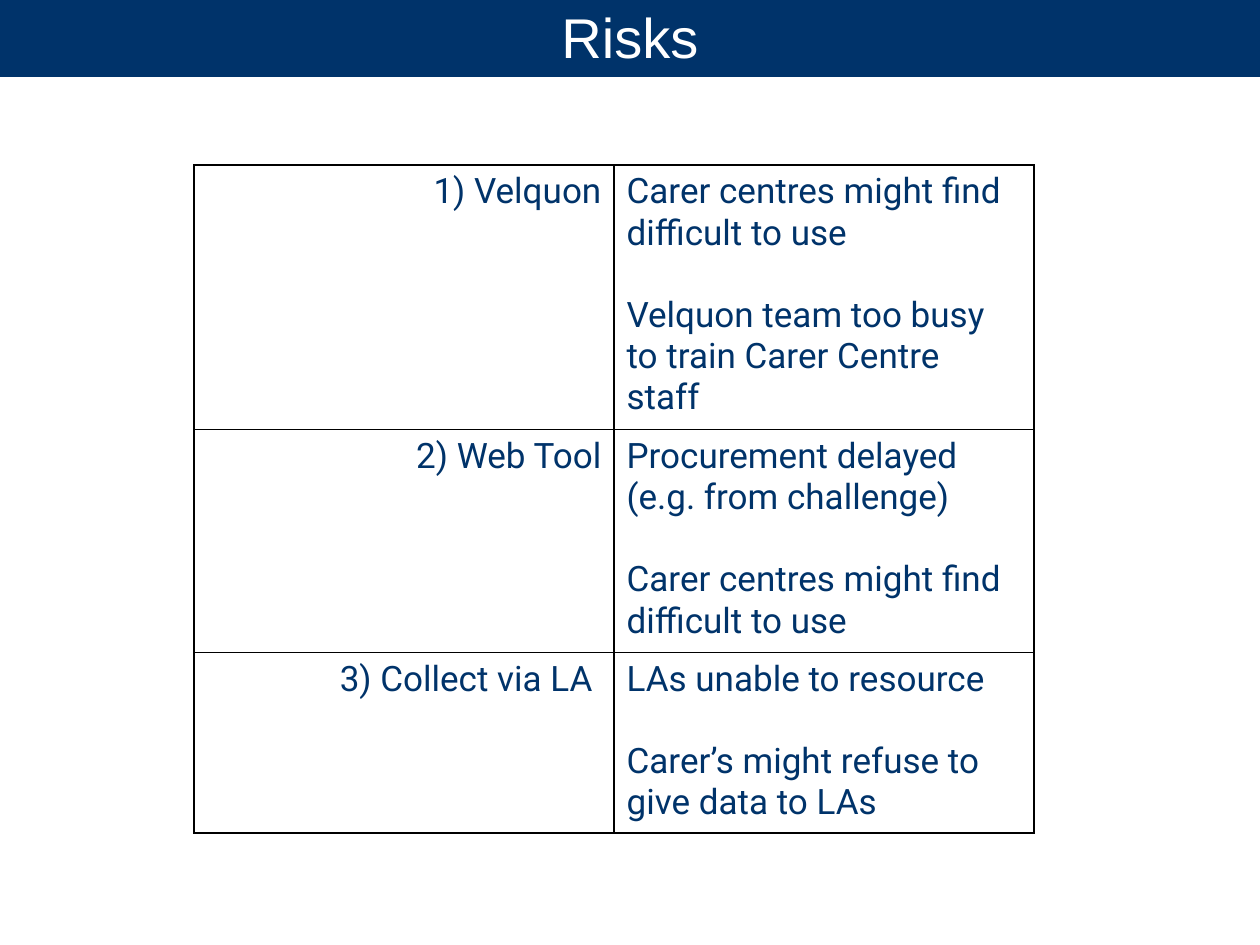
from lxml.etree import fromstring
from pptx import Presentation
from pptx.dml.color import RGBColor
from pptx.enum.text import MSO_ANCHOR, MSO_AUTO_SIZE, PP_ALIGN
from pptx.oxml.ns import nsdecls
from pptx.util import Inches, Pt

COLORS = {"navy": "00336A", "white": "FFFFFF", "border": "000000"}
RISKS = [
    ("1) Velquon", ["Carer centres might find difficult to use",
                    "Velquon team too busy to train Carer Centre staff"]),
    ("2) Web Tool", ["Procurement delayed (e.g. from challenge)",
                     "Carer centres might find difficult to use"]),
    ("3) Collect via LA ", ["LAs unable to resource",
                            "Carer’s might refuse to give data to LAs"]),
]
ROW_HEIGHTS = [2.1, 1.77, 1.43]


def format_paragraph(p, font, size, color, align):
    p.alignment = align
    for r in p.runs:
        r.font.name = font
        r.font.size = Pt(size)
        r.font.color.rgb = RGBColor.from_string(COLORS[color])


def add_borders(cell):
    tcPr = cell._tc.get_or_add_tcPr()
    for i, side in enumerate("LRTB"):
        tcPr.insert(i, fromstring(
            f'<a:ln{side} {nsdecls("a")} w="{Pt(1)}"><a:solidFill>'
            f'<a:srgbClr val="{COLORS["border"]}"/></a:solidFill></a:ln{side}>'))


prs = Presentation()
prs.slide_width, prs.slide_height = Inches(10), Inches(7.5)
s = prs.slides.add_slide(prs.slide_layouts[5])

# Title bar
title = s.shapes.title
title.left, title.top = 0, Inches(-0.03)
title.width, title.height = prs.slide_width, Inches(0.64)
title.fill.solid()
title.fill.fore_color.rgb = RGBColor.from_string(COLORS["navy"])
tf = title.text_frame
tf.text = "Risks"
tf.auto_size = MSO_AUTO_SIZE.NONE
tf.vertical_anchor = MSO_ANCHOR.MIDDLE
tf.margin_left = tf.margin_right = tf.margin_top = tf.margin_bottom = Inches(0.05)
format_paragraph(tf.paragraphs[0], "Arial", 32, "white", PP_ALIGN.CENTER)

# Risk table: option on the left, its risks on the right
table = s.shapes.add_table(len(RISKS), 2, Inches(1.54), Inches(1.31),
                           prs.slide_width * 2 // 3, Inches(sum(ROW_HEIGHTS))).table
table.first_row = table.horz_banding = False
for row, height, (option, risks) in zip(table.rows, ROW_HEIGHTS, RISKS):
    row.height = Inches(height)
    columns = [(option, PP_ALIGN.RIGHT), ("\n".join(risks), PP_ALIGN.LEFT)]
    for cell, (text, align) in zip(row.cells, columns):
        cell.text_frame.text = text
        cell.fill.background()
        add_borders(cell)
        for i, p in enumerate(cell.text_frame.paragraphs):
            if i:
                p.space_before = Pt(23.5)
            format_paragraph(p, "Roboto", 20, "navy", align)

prs.save("out.pptx")
